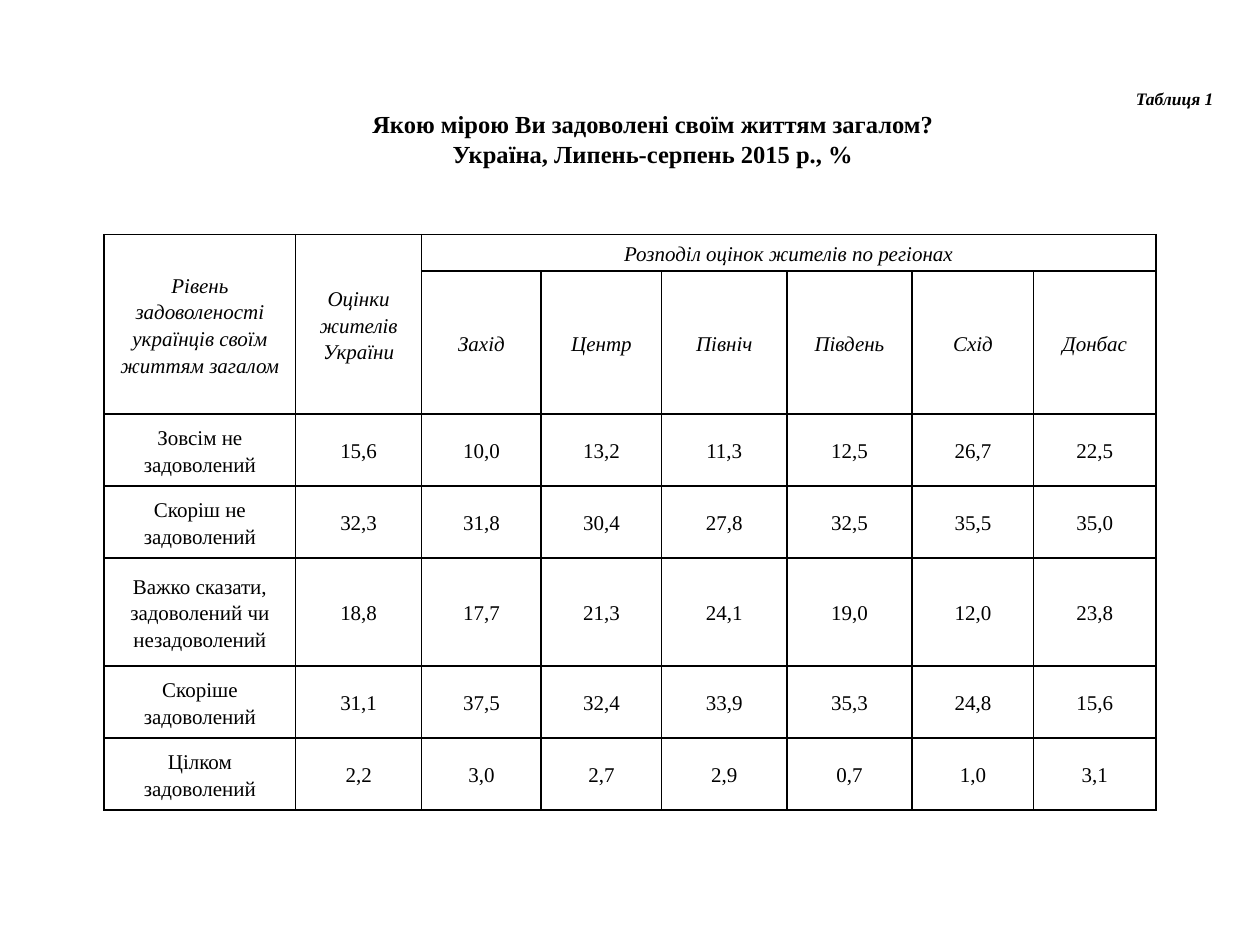
import pptx
import pptx.dml.color
import pptx.enum.text
import pptx.oxml
import pptx.oxml.ns
import pptx.util

Cm, Pt = pptx.util.Cm, pptx.util.Pt
ALIGN = pptx.enum.text.PP_ALIGN
MIDDLE = pptx.enum.text.MSO_ANCHOR.MIDDLE
FONT, BLACK = "Times New Roman", "000000"

# Content: text, size, italic, alignment
heading = [
    ("Таблиця 1", 10, True, ALIGN.RIGHT),
    ("Якою мірою Ви задоволені своїм життям загалом?", 14, False, ALIGN.CENTER),
    ("Україна, Липень-серпень 2015 р., %", 14, False, ALIGN.CENTER),
]
level_header = "Рівень задоволеності українців своїм життям загалом"
ukraine_header = "Оцінки жителів України"
regions_header = "Розподіл оцінок жителів по регіонах"
regions = ["Захід", "Центр", "Північ", "Південь", "Схід", "Донбас"]
ratings = [
    ("Зовсім не задоволений", "15,6", "10,0", "13,2", "11,3", "12,5", "26,7", "22,5"),
    ("Скоріш не задоволений", "32,3", "31,8", "30,4", "27,8", "32,5", "35,5", "35,0"),
    ("Важко сказати, задоволений чи незадоволений",
     "18,8", "17,7", "21,3", "24,1", "19,0", "12,0", "23,8"),
    ("Скоріше задоволений", "31,1", "37,5", "32,4", "33,9", "35,3", "24,8", "15,6"),
    ("Цілком задоволений", "2,2", "3,0", "2,7", "2,9", "0,7", "1,0", "3,1"),
]
column_widths = [3.86, 2.54, 2.41, 2.43, 2.52, 2.53, 2.45, 2.46]
row_heights = [0.73, 2.89, 1.45, 1.45, 2.18, 1.45, 1.45]


def color(value):
    return pptx.dml.color.RGBColor.from_string(value)


def write(paragraph, text, size, bold, italic, align):
    paragraph.alignment = align
    run = paragraph.add_run()
    run.text = text
    run.font.name, run.font.size = FONT, Pt(size)
    run.font.bold, run.font.italic = bold, italic
    run.font.color.rgb = color(BLACK)


def add_borders(cell, width):
    properties = cell._tc.get_or_add_tcPr()
    for position, side in enumerate(("lnL", "lnR", "lnT", "lnB")):
        properties.insert(position, pptx.oxml.parse_xml(
            f'<a:{side} {pptx.oxml.ns.nsdecls("a")} w="{Pt(width)}">'
            f'<a:solidFill><a:srgbClr val="{BLACK}"/></a:solidFill></a:{side}>'))


presentation = pptx.Presentation()
presentation.slide_width, presentation.slide_height = Cm(25.4), Cm(19.05)
slide = presentation.slides.add_slide(presentation.slide_layouts[6])

# Ratings table
rows = [
    [level_header, ukraine_header, regions_header] + [""] * (len(regions) - 1),
    ["", ""] + regions,
    *ratings,
]
table = slide.shapes.add_table(
    len(rows), len(column_widths), Cm(2.1), Cm(4.73),
    Cm(sum(column_widths)), Cm(sum(row_heights))).table
table.first_row = table.horz_banding = False
for column, width in zip(table.columns, column_widths):
    column.width = Cm(width)
for row, height in zip(table.rows, row_heights):
    row.height = Cm(height)

for r, texts in enumerate(rows):
    for c, text in enumerate(texts):
        cell = table.cell(r, c)
        cell.fill.background()
        add_borders(cell, 1)
        cell.vertical_anchor = MIDDLE
        cell.margin_left = cell.margin_right = Cm(0.18)
        cell.margin_top = cell.margin_bottom = 0
        if text:
            paragraph = cell.text_frame.paragraphs[0]
            paragraph.line_spacing = 1.15
            write(paragraph, text, 12, False, r < 2, ALIGN.CENTER)

# Merged headers
for c in (0, 1):
    table.cell(0, c).merge(table.cell(1, c))
table.cell(0, 2).merge(table.cell(0, len(column_widths) - 1))

# Table number and title
frame = slide.shapes.add_textbox(Cm(0.86), Cm(1.63), Cm(23.85), Cm(2.64)).text_frame
frame.word_wrap = True
frame.vertical_anchor = MIDDLE
frame.margin_bottom = Cm(0.86)
for number, (text, size, italic, align) in enumerate(heading):
    paragraph = frame.add_paragraph() if number else frame.paragraphs[0]
    paragraph._p.get_or_add_pPr().set("indent", str(Cm(0.76)))
    write(paragraph, text, size, True, italic, align)

presentation.save("out.pptx")
